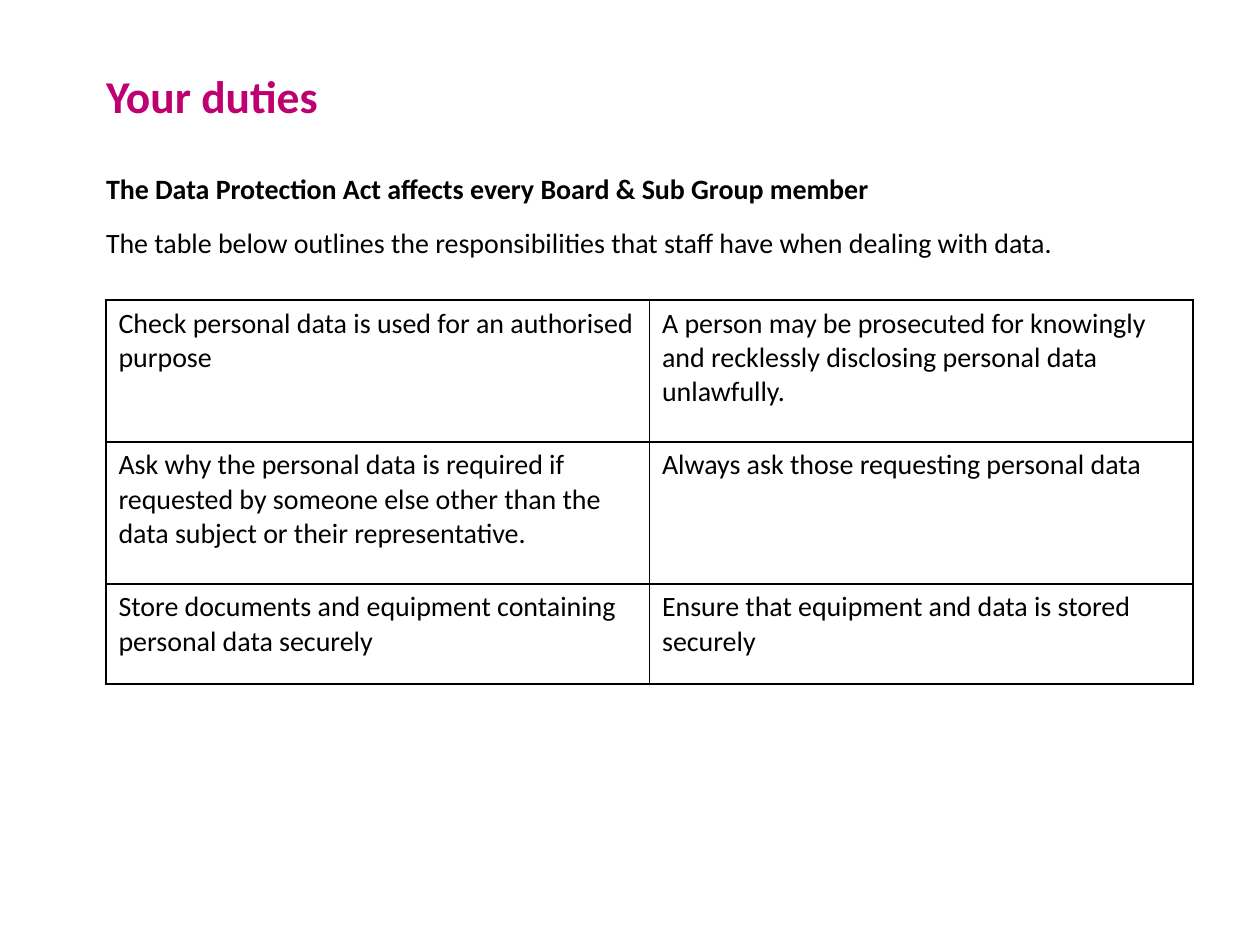
from lxml import etree
from pptx import Presentation
from pptx.dml.color import RGBColor
from pptx.enum.text import MSO_ANCHOR, MSO_AUTO_SIZE, PP_ALIGN
from pptx.oxml.ns import qn
from pptx.util import Pt

PX = 914400 / 126
TOP, LEFT, NO_FIT = MSO_ANCHOR.TOP, PP_ALIGN.LEFT, MSO_AUTO_SIZE.NONE
FONT = "Calibri"
MAGENTA = RGBColor(0xBE, 0x00, 0x71)
BLACK = RGBColor(0x00, 0x00, 0x00)

INTRO = [
    ("The Data Protection Act affects every Board & Sub Group member", True),
    ("The table below outlines the responsibilities that staff have when dealing with data.", False),
]
DUTIES = [
    ("Check personal data is used for an authorised purpose",
     "A person may be prosecuted for knowingly and recklessly disclosing personal data unlawfully."),
    ("Ask why the personal data is required if requested by someone else other than the data subject or their representative.",
     "Always ask those requesting personal data"),
    ("Store documents and equipment containing personal data securely",
     "Ensure that equipment and data is stored securely"),
]
ROW_HEIGHTS = [142, 142, 100]


def px(n):
    """Turn pixels into EMU."""
    return round(n * PX)


def add_run(p, text, size, color, bold=False):
    """Add one formatted run to a paragraph."""
    r = p.add_run()
    r.text = text
    r.font.name, r.font.size, r.font.bold = FONT, Pt(size), bold
    r.font.color.rgb = color


def place(sp, box):
    """Move a placeholder to a box and return its unpadded text frame."""
    sp.left, sp.top, sp.width, sp.height = map(px, box)
    tf = sp.text_frame
    tf.margin_left = tf.margin_top = tf.margin_right = tf.margin_bottom = 0
    tf.word_wrap, tf.auto_size, tf.vertical_anchor = True, NO_FIT, TOP
    return tf


def fill_title(sp, box):
    """Write the slide title."""
    p = place(sp, box).paragraphs[0]
    p.alignment = LEFT
    add_run(p, "Your duties", 26, MAGENTA, True)


def fill_intro(sp, box):
    """Write the unbulleted introduction."""
    tf = place(sp, box)
    for i, (text, bold) in enumerate(INTRO):
        p = tf.add_paragraph() if i else tf.paragraphs[0]
        pPr = p._p.get_or_add_pPr()
        pPr.set("marL", "0")
        pPr.set("indent", "0")
        etree.SubElement(pPr, qn("a:buNone"))
        p.line_spacing = 1.2
        p.space_before = Pt(8 if i else 0)
        add_run(p, text, 16, BLACK, bold)


def set_borders(cell):
    """Draw a thin black line on each side of a cell."""
    tcPr = cell._tc.get_or_add_tcPr()
    for i, side in enumerate(("lnL", "lnR", "lnT", "lnB")):
        ln = etree.Element(qn(f"a:{side}"), w=str(Pt(1)))
        fill = etree.SubElement(ln, qn("a:solidFill"))
        etree.SubElement(fill, qn("a:srgbClr"), val=str(BLACK))
        tcPr.insert(i, ln)


def add_duties(s, box):
    """Add the table of duties."""
    x, y, w, h = map(px, box)
    table = s.shapes.add_table(len(DUTIES), 2, x, y, w, h).table
    table.first_row = table.horz_banding = False
    for col in table.columns:
        col.width = w // 2
    for row, height, texts in zip(table.rows, ROW_HEIGHTS, DUTIES):
        row.height = px(height)
        for cell, text in zip(row.cells, texts):
            cell.fill.background()
            set_borders(cell)
            add_run(cell.text_frame.paragraphs[0], text, 16, BLACK)


def main():
    """Build and save the slide."""
    prs = Presentation()
    prs.slide_width, prs.slide_height = px(1260), px(945)
    s = prs.slides.add_slide(prs.slide_layouts[1])
    fill_title(s.shapes.title, (106, 68, 673, 50))
    fill_intro(s.placeholders[1], (106, 165, 1056, 600))
    add_duties(s, (106, 300, 1087, sum(ROW_HEIGHTS)))
    prs.save("out.pptx")


if __name__ == "__main__":
    main()
